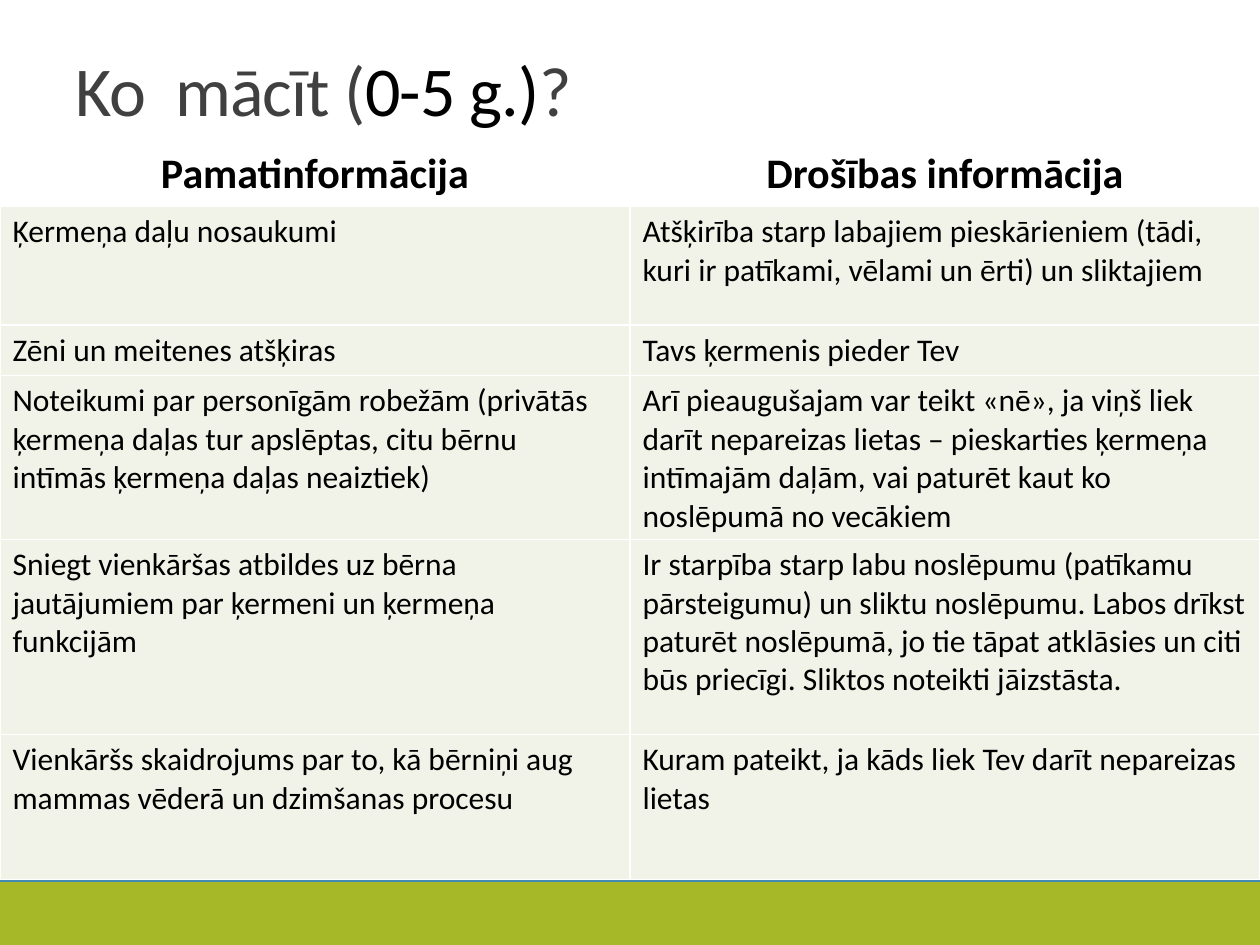
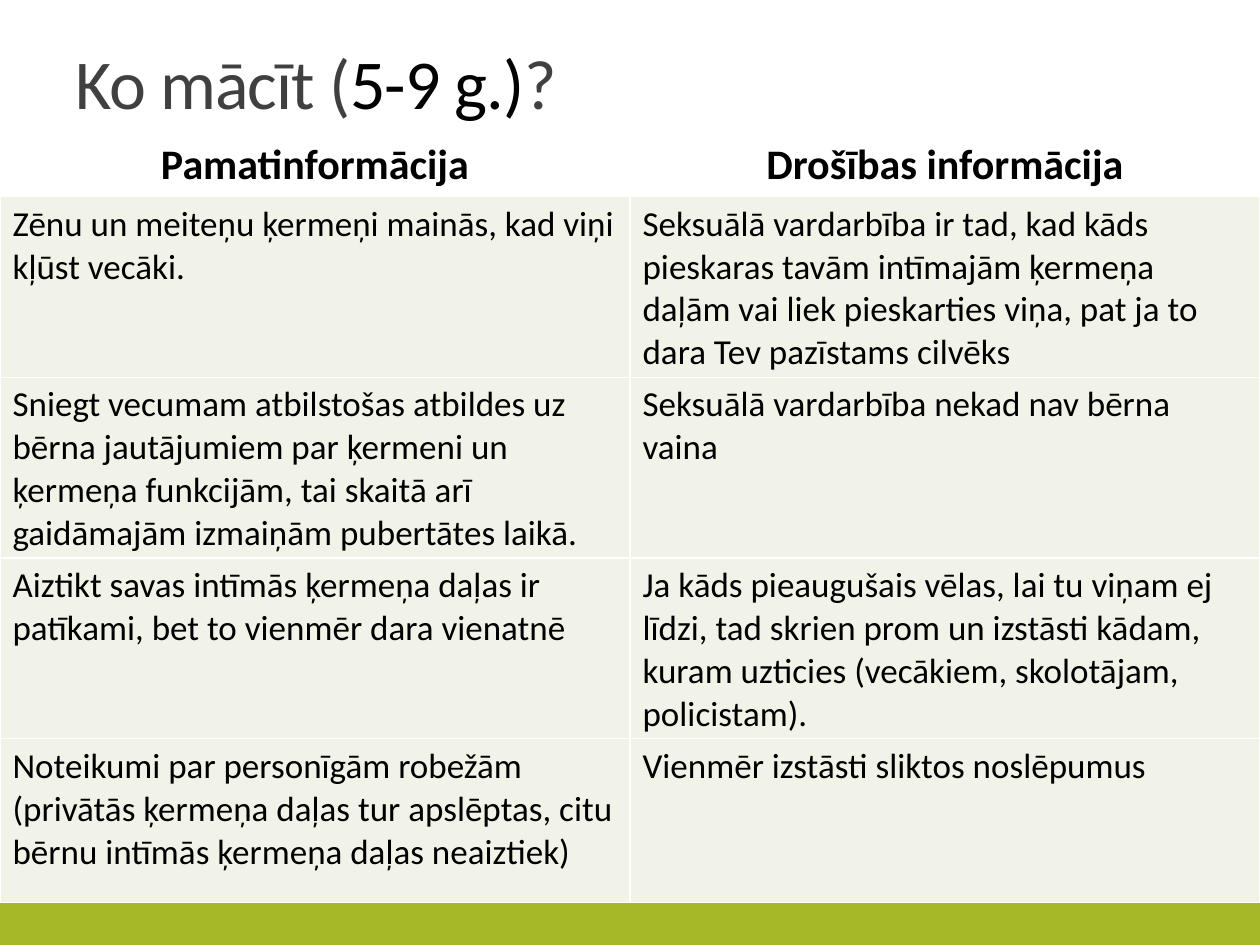
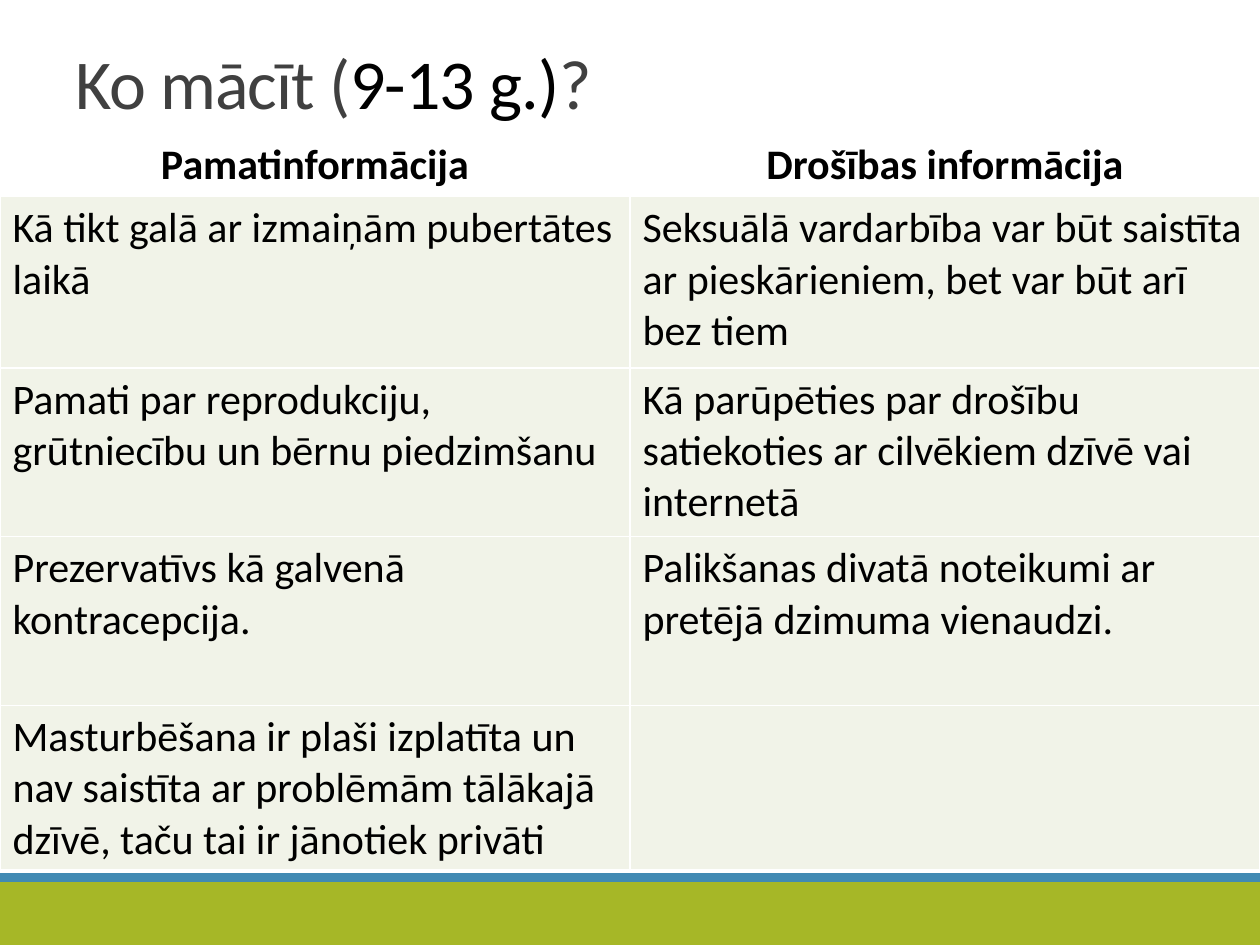
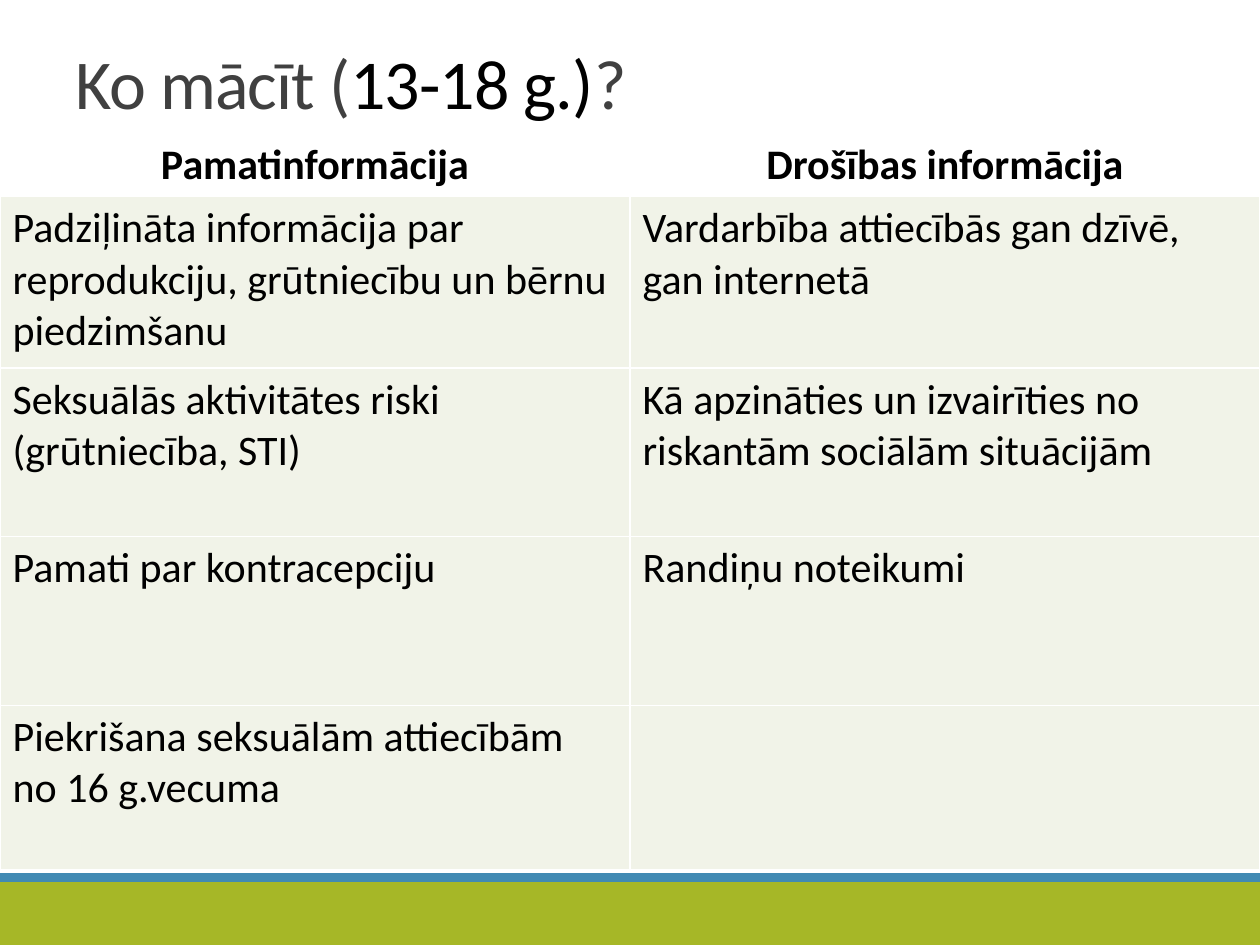
from lxml.etree import SubElement
from pptx import Presentation
from pptx.dml.color import RGBColor
from pptx.enum.shapes import MSO_SHAPE as Shape
from pptx.enum.text import MSO_ANCHOR as Anchor, PP_ALIGN as Align
from pptx.oxml.ns import qn
from pptx.util import Inches, Pt

# Shared look
WIDTH, HEIGHT = 10, 7.5
FONT = "Calibri"
COLORS = {
    "green": "A6B727", "blue": "418AB3", "title": "404040",
    "text": "000000", "white": "FFFFFF", "cell": "F1F3E8",
}
BANDS = [("green", 7, 0.5), ("blue", 6.93, 0.07)]  # color, top, height
TITLE_LEFT = 0.5
TITLE_SIZE, HEADER_SIZE = 40, 24
HEADERS = ("Pamatinformācija", "Drošības informācija")

# Places: title top and height, table top
LOW = {"title": (0.56, 0.53), "table": 1.13}
HIGH = {"title": (0.27, 0.76), "table": 1.06}
EVEN_ROWS = [0.5, 1.36, 1.34, 1.34, 1.3]

# Content
PAGES = [
    {
        "lead": "Ko  mācīt (", "age": "0-5 g.)", "place": LOW, "size": 18,
        "heights": [0.51, 0.94, 0.4, 1.3, 1.55, 1.15],
        "rows": [
            ("Ķermeņa daļu nosaukumi",
             "Atšķirība starp labajiem pieskārieniem (tādi, kuri ir patīkami, "
             "vēlami un ērti) un sliktajiem"),
            ("Zēni un meitenes atšķiras", "Tavs ķermenis pieder Tev"),
            ("Noteikumi par personīgām robežām (privātās ķermeņa daļas tur "
             "apslēptas, citu bērnu intīmās ķermeņa daļas neaiztiek)",
             "Arī pieaugušajam var teikt «nē», ja viņš liek darīt nepareizas "
             "lietas – pieskarties ķermeņa intīmajām daļām, vai paturēt kaut "
             "ko noslēpumā no vecākiem"),
            ("Sniegt vienkāršas atbildes uz bērna jautājumiem par ķermeni un "
             "ķermeņa funkcijām",
             "Ir starpība starp labu noslēpumu (patīkamu pārsteigumu) un "
             "sliktu noslēpumu. Labos drīkst paturēt noslēpumā, jo tie tāpat "
             "atklāsies un citi būs priecīgi. Sliktos noteikti jāizstāsta."),
            ("Vienkāršs skaidrojums par to, kā bērniņi aug mammas vēderā un "
             "dzimšanas procesu",
             "Kuram pateikt, ja kāds liek Tev darīt nepareizas lietas"),
        ],
    },
    {
        "lead": "Ko mācīt (", "age": "5-9 g.)", "place": HIGH, "size": 20,
        "heights": [0.5, 1.43, 1.43, 1.43, 1.3],
        "rows": [
            ("Zēnu un meiteņu ķermeņi mainās, kad viņi kļūst vecāki.",
             "Seksuālā vardarbība ir tad, kad kāds pieskaras tavām intīmajām "
             "ķermeņa daļām vai liek pieskarties viņa, pat ja to dara Tev "
             "pazīstams cilvēks"),
            ("Sniegt vecumam atbilstošas atbildes uz bērna jautājumiem par "
             "ķermeni un ķermeņa funkcijām, tai skaitā arī gaidāmajām "
             "izmaiņām pubertātes laikā.",
             "Seksuālā vardarbība nekad nav bērna vaina"),
            ("Aiztikt savas intīmās ķermeņa daļas ir patīkami, bet to vienmēr "
             "dara vienatnē",
             "Ja kāds pieaugušais vēlas, lai tu viņam ej līdzi, tad skrien "
             "prom un izstāsti kādam, kuram uzticies (vecākiem, skolotājam, "
             "policistam)."),
            ("Noteikumi par personīgām robežām (privātās ķermeņa daļas tur "
             "apslēptas, citu bērnu intīmās ķermeņa daļas neaiztiek)",
             "Vienmēr izstāsti sliktos noslēpumus"),
        ],
    },
    {
        "lead": "Ko mācīt (", "age": "9-13 g.)", "place": HIGH, "size": 24,
        "heights": EVEN_ROWS,
        "rows": [
            ("Kā tikt galā ar izmaiņām pubertātes laikā",
             "Seksuālā vardarbība var būt saistīta ar pieskārieniem, bet var "
             "būt arī bez tiem"),
            ("Pamati par reprodukciju, grūtniecību un bērnu piedzimšanu",
             "Kā parūpēties par drošību satiekoties ar cilvēkiem dzīvē vai "
             "internetā"),
            ("Prezervatīvs kā galvenā kontracepcija.",
             "Palikšanas divatā noteikumi ar pretējā dzimuma vienaudzi."),
            ("Masturbēšana ir plaši izplatīta un nav saistīta ar problēmām "
             "tālākajā dzīvē, taču tai ir jānotiek privāti", ""),
        ],
    },
    {
        "lead": "Ko mācīt (", "age": "13-18 g.)", "place": HIGH, "size": 24,
        "heights": EVEN_ROWS,
        "rows": [
            ("Padziļināta informācija par reprodukciju, grūtniecību un bērnu "
             "piedzimšanu",
             "Vardarbība attiecībās gan dzīvē, gan internetā"),
            ("Seksuālās aktivitātes riski (grūtniecība, STI)",
             "Kā apzināties un izvairīties no riskantām sociālām situācijām"),
            ("Pamati par kontracepciju", "Randiņu noteikumi"),
            ("Piekrišana seksuālām attiecībām no 16 g.vecuma", ""),
        ],
    },
]


def rgb(name):
    return RGBColor.from_string(COLORS[name])


def add_bands(page):
    for color, top, height in BANDS:
        band = page.shapes.add_shape(Shape.RECTANGLE, 0, Inches(top),
                                     Inches(WIDTH), Inches(height))
        band.shadow.inherit = False
        band.fill.solid()
        band.fill.fore_color.rgb = rgb(color)
        band.line.fill.background()


def add_title(page, lead, age, top, height):
    box = page.shapes.add_textbox(Inches(TITLE_LEFT), Inches(top),
                                  Inches(WIDTH - 2 * TITLE_LEFT), Inches(height))
    frame = box.text_frame
    frame.word_wrap = True
    frame.vertical_anchor = Anchor.BOTTOM
    para = frame.paragraphs[0]
    para.line_spacing = 0.85
    para.font.name, para.font.size = FONT, Pt(TITLE_SIZE)
    for text, color in ((lead, "title"), (age, "text"), ("?", "title")):
        span = para.add_run()
        span.text = text
        span.font.color.rgb = rgb(color)
        span._r.get_or_add_rPr().set("spc", "-50")


def add_borders(cell):
    properties = cell._tc.get_or_add_tcPr()
    for side in ("lnL", "lnR", "lnT", "lnB"):
        line = SubElement(properties, qn(f"a:{side}"), w=str(Pt(1)))
        fill = SubElement(line, qn("a:solidFill"))
        SubElement(fill, qn("a:srgbClr"), val=COLORS["white"])


def fill_cell(cell, text, size, is_header):
    add_borders(cell)
    cell.fill.solid()
    cell.fill.fore_color.rgb = rgb("white" if is_header else "cell")
    para = cell.text_frame.paragraphs[0]
    para.alignment = Align.CENTER if is_header else Align.LEFT
    font = para.font
    font.name, font.size, font.bold = FONT, Pt(size), is_header
    font.color.rgb = rgb("text")
    if text:
        para.add_run().text = text


def add_grid(page, rows, heights, size, top):
    lines = [HEADERS, *rows]
    table = page.shapes.add_table(len(lines), len(HEADERS), 0, Inches(top),
                                  Inches(WIDTH), Inches(sum(heights))).table
    table.horz_banding = False
    for column in table.columns:
        column.width = Inches(WIDTH / len(HEADERS))
    for r, (texts, height) in enumerate(zip(lines, heights)):
        table.rows[r].height = Inches(height)
        for c, text in enumerate(texts):
            fill_cell(table.cell(r, c), text, size if r else HEADER_SIZE, r == 0)


def main():
    deck = Presentation()
    deck.slide_width, deck.slide_height = Inches(WIDTH), Inches(HEIGHT)
    for content in PAGES:
        page = deck.slides.add_slide(deck.slide_layouts[6])
        place = content["place"]
        add_bands(page)
        add_title(page, content["lead"], content["age"], *place["title"])
        add_grid(page, content["rows"], content["heights"], content["size"],
                 place["table"])
    deck.save("out.pptx")


if __name__ == "__main__":
    main()
